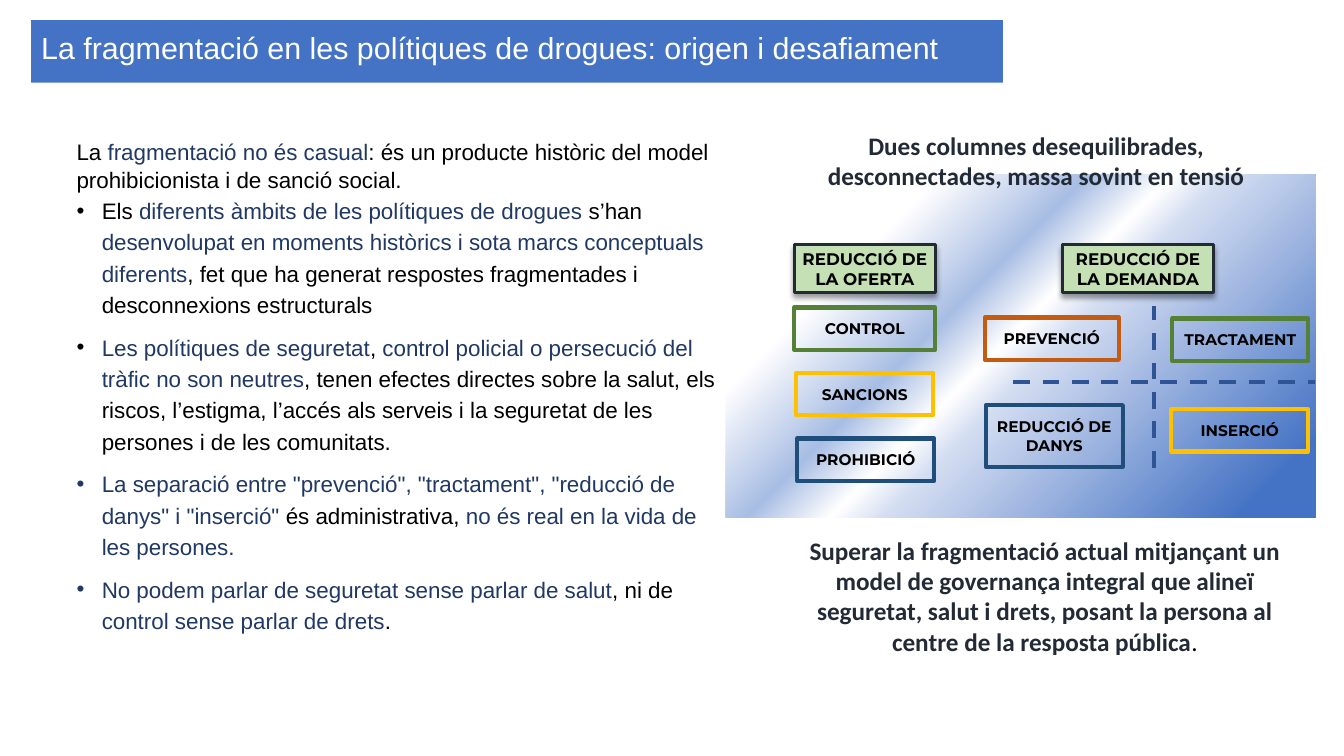
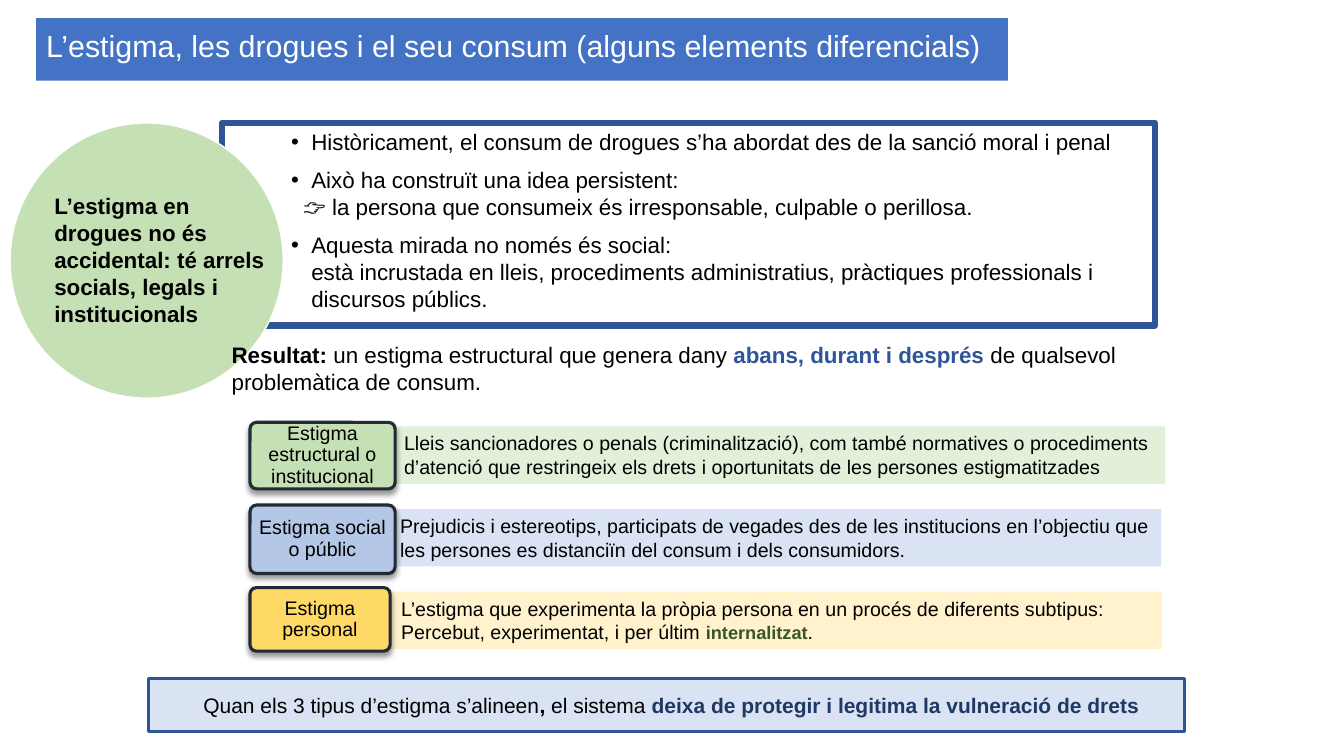
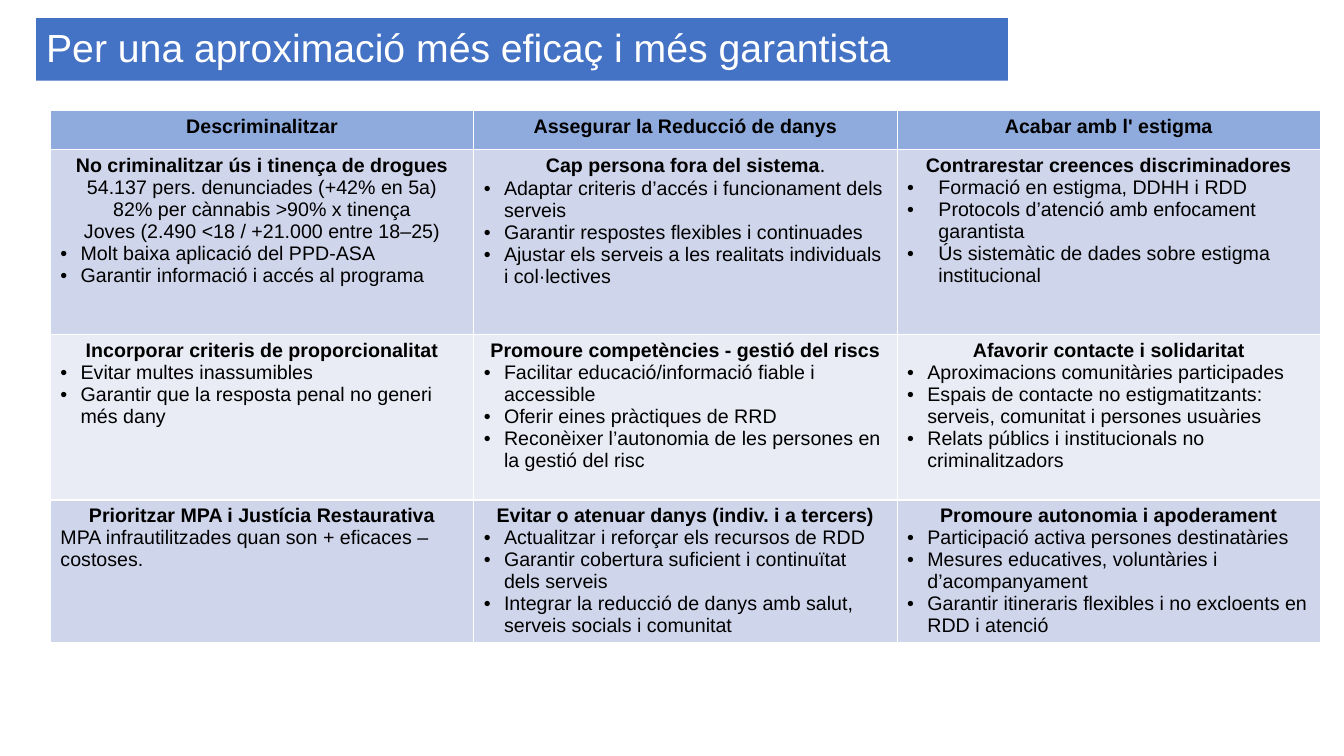
from dataclasses import dataclass
from typing import Any

import lxml.etree
import pptx
import pptx.dml.color
import pptx.enum.dml
import pptx.enum.shapes
import pptx.enum.text
import pptx.oxml.ns
import pptx.util

SHAPE = pptx.enum.shapes.MSO_SHAPE
ANCHOR = pptx.enum.text.MSO_ANCHOR
ALIGN = pptx.enum.text.PP_ALIGN
Pt = pptx.util.Pt
qn = pptx.oxml.ns.qn

# Shared palette
BLACK, WHITE, INK = "000000", "FFFFFF", "222A35"
BLUE, NAVY, EDGE, DASH = "4472C4", "203864", "2F5597", "2F5496"
GREEN, AMBER, STEEL, RUST = "548135", "FFC000", "1E4E79", "C55A11"
MINT, PALE_BLUE = "C5E0B4", "DAE3F3"
BAND_FILLS = ("CFD5EA", "E9EBF5")

GRID = 0.1  # one column or row of the layout grid, in inches
SLIDE_COLS, SLIDE_ROWS = 133.33, 75


def cells(count):
    return pptx.util.Inches(count * GRID)


def rgb(color):
    return pptx.dml.color.RGBColor.from_string(color)


@dataclass
class Box:
    """An area of the grid: left column, top row, columns, rows."""
    left: float
    top: float
    cols: float
    rows: float

    def inner(self, left, top, cols, rows):
        return Box(self.left + left, self.top + top, cols, rows)

    def emu(self):
        return [cells(n) for n in (self.left, self.top, self.cols, self.rows)]


@dataclass
class Para:
    """Runs are plain strings or (text, changes) pairs."""
    runs: Any
    size: float = 16
    color: str = BLACK
    font: str = "Arial"
    bold: bool = False
    align: Any = ALIGN.LEFT
    bullet: str = ""  # bullet colour
    margin: float = 0
    hang: float = 0
    before: float = 0
    after: float = 0
    spacing: Any = None


def style(font, size=None, color=None, name=None, bold=None):
    if size:
        font.size = Pt(size)
    if color:
        font.color.rgb = rgb(color)
    if name:
        font.name = name
    if bold is not None:
        font.bold = bold


def add_bullet(properties, color):
    bullet_color = lxml.etree.SubElement(properties, qn("a:buClr"))
    lxml.etree.SubElement(bullet_color, qn("a:srgbClr"), val=color)
    lxml.etree.SubElement(properties, qn("a:buFont"), typeface="Arial")
    lxml.etree.SubElement(properties, qn("a:buChar"), char="•")


def write(frame, paras):
    for index, para in enumerate(paras):
        line = frame.paragraphs[0] if index == 0 else frame.add_paragraph()
        properties = line._p.get_or_add_pPr()
        if para.margin:
            properties.set("marL", str(cells(para.margin)))
            properties.set("indent", str(-cells(para.hang)))
        if para.bullet:
            add_bullet(properties, para.bullet)
        line.alignment = para.align
        line.space_before, line.space_after = Pt(para.before), Pt(para.after)
        if para.spacing:
            line.line_spacing = para.spacing
        style(line.font, para.size, para.color, para.font, para.bold)
        for piece in [para.runs] if isinstance(para.runs, str) else para.runs:
            text, changes = (piece, {}) if isinstance(piece, str) else piece
            run = line.add_run()
            run.text = text
            style(run.font, **changes)


def set_frame(frame, paras, anchor, insets):
    frame.word_wrap = True
    frame.vertical_anchor = anchor
    side, edge = (cells(n) for n in insets)
    frame.margin_left = frame.margin_right = side
    frame.margin_top = frame.margin_bottom = edge
    write(frame, paras)


def add_text(slide, box, paras, insets=(1, 0.5)):
    set_frame(slide.shapes.add_textbox(*box.emu()).text_frame, paras, ANCHOR.TOP, insets)


def add_block(slide, box, paras=(), fill=None, line=None, width=1, kind=SHAPE.RECTANGLE,
              anchor=ANCHOR.MIDDLE, insets=(1, 0.5), raised=False):
    block = slide.shapes.add_shape(kind, *box.emu())
    block.shadow.inherit = False
    if fill:
        block.fill.solid()
        block.fill.fore_color.rgb = rgb(fill)
    else:
        block.fill.background()
    if line:
        block.line.color.rgb = rgb(line)
        block.line.width = Pt(width)
    else:
        block.line.fill.background()
    if raised:
        effects = block._element.spPr.find(qn("a:effectLst"))
        shadow = lxml.etree.SubElement(effects, qn("a:outerShdw"), blurRad=str(Pt(4)),
                                       dist=str(Pt(3)), dir="5400000", rotWithShape="0")
        tone = lxml.etree.SubElement(shadow, qn("a:srgbClr"), val=BLACK)
        lxml.etree.SubElement(tone, qn("a:alpha"), val="40000")
    set_frame(block.text_frame, paras, anchor, insets)
    return block


def add_title(slide, text, left=3.6, top=1.8, size=21.7, spacing=0.7):
    add_block(slide, Box(left, top, 96.4, 6.2),
              [Para(text, size, WHITE, spacing=spacing)], BLUE)


def add_dashes(slide, start, end):
    dashes = slide.shapes.add_connector(
        pptx.enum.shapes.MSO_CONNECTOR.STRAIGHT, *(cells(n) for n in start + end))
    dashes.line.color.rgb = rgb(DASH)
    dashes.line.width = Pt(3)
    dashes.line.dash_style = pptx.enum.dml.MSO_LINE.DASH
    lxml.etree.SubElement(dashes._element.spPr, qn("a:effectLst"))


# Slide 1: fragmentation
def add_gradient_panel(slide, box):
    panel = add_block(slide, box)
    panel.fill.gradient()
    panel.fill.gradient_angle = 315
    stops = panel._element.spPr.find(qn("a:gradFill")).find(qn("a:gsLst"))
    for stop in list(stops):
        stops.remove(stop)
    for share, color in ((23, WHITE), (39, "A9BEE4"), (48, WHITE), (54, "D3DDF1"), (92, BLUE)):
        stop = lxml.etree.SubElement(stops, qn("a:gs"), pos=str(share * 1000))
        lxml.etree.SubElement(stop, qn("a:srgbClr"), val=color)


def add_policy_map(slide, box):
    add_gradient_panel(slide, box)
    # Policy fields
    fields = [
        ("PREVENCIÓ", RUST, 25.7, 14.2, 13.3, 4.2),
        ("TRACTAMENT", GREEN, 44.3, 14.3, 13.5, 4.2),
        ("REDUCCIÓ DE DANYS", STEEL, 25.8, 22.9, 13.6, 6.1),
        ("INSERCIÓ", AMBER, 44.2, 23.3, 13.6, 4.2),
        ("CONTROL", GREEN, 6.8, 13.2, 14, 4.2),
        ("SANCIONS", AMBER, 7, 19.7, 13.6, 4.2),
        ("PROHIBICIÓ", STEEL, 7.1, 26.2, 13.6, 4.2),
    ]
    for name, color, *place in fields:
        label = Para(name, 11, font="Montserrat", bold=True, align=ALIGN.CENTER)
        add_block(slide, box.inner(*place), [label], line=color, width=3, insets=(0.7, 0.3))
    # Cross between the demand fields
    middle, upright = box.top + 20.6, box.left + 42.5
    add_dashes(slide, (box.left + 28.5, middle), (box.left + box.cols, middle))
    add_dashes(slide, (upright, box.top + 29.1), (upright, box.top + 13.1))
    # Column heads
    for name, left, cols in (("REDUCCIÓ DE LA OFERTA", 6.8, 14),
                             ("REDUCCIÓ DE LA DEMANDA", 33.4, 15)):
        label = Para(name, 12, font="Montserrat", bold=True, align=ALIGN.CENTER)
        add_block(slide, box.inner(left, 7, cols, 4.7), [label], MINT, INK, 2.25,
                  insets=(0.7, 0.3), raised=True)


def add_fragmentation_text(slide, box):
    def accent(text):
        return text, {"color": NAVY}

    points = [
        (BLACK, ["Els ", accent("diferents àmbits de les polítiques de drogues "), "s’han ",
                 accent("desenvolupat en moments històrics i sota marcs conceptuals diferents"),
                 ", fet que ha generat respostes fragmentades i desconnexions estructurals"]),
        (BLACK, [accent("Les polítiques de seguretat"), ", ",
                 accent("control policial o persecució del tràfic no son neutres"),
                 ", tenen efectes directes sobre la salut, els riscos, l’estigma, l’accés als "
                 "serveis i la seguretat de les persones i de les comunitats."]),
        (NAVY, [accent('La separació entre "prevenció", "tractament", "reducció de danys" '
                       'i "inserció" '),
                "és administrativa, ", accent("no és real en la vida de les persones.")]),
        (NAVY, [accent("No podem parlar de seguretat sense parlar de salut"), ", ni de ",
                accent("control sense parlar de drets"), "."]),
    ]
    intro = Para(["La ", accent("fragmentació no és casual"),
                  ": és un producte històric del model prohibicionista i de sanció social."],
                 spacing=Pt(19.5))
    add_text(slide, box, [intro] + [
        Para(runs, bullet=color, margin=2.5, hang=2.5, after=8, spacing=Pt(22.4))
        for color, runs in points], insets=(0, 0))


def build_fragmentation(slide):
    add_policy_map(slide, Box(72, 17.3, 58.5, 34))
    add_title(slide, "La fragmentació en les polítiques de drogues: origen i desafiament", 3.1, 2)
    add_fragmentation_text(slide, Box(7.6, 13.7, 63.6, 50.5))
    # Statements above and below the map
    statements = [
        (Box(76.5, 12.4, 52.6, 7.1),
         ["Dues columnes desequilibrades, desconnectades, massa sovint en tensió"]),
        (Box(76.9, 52.6, 53.5, 13.1),
         ["Superar la fragmentació actual mitjançant un model de governança integral que alineï "
          "seguretat, salut i drets, posant la persona al centre de la resposta pública",
          (".", {"color": BLACK, "bold": False})]),
    ]
    for box, runs in statements:
        add_text(slide, box, [Para(runs, 18, INK, "Calibri", True, ALIGN.CENTER)])


# Slide 2: stigma
def add_origins(slide, box):
    history = [
        Para("Històricament, el consum de drogues s’ha abordat des de la sanció moral i penal",
             bullet=BLACK, margin=7.9, hang=2),
        Para("Això ha construït una idea persistent:", bullet=BLACK, margin=7.9, hang=2, before=8),
        Para("👉 la persona que consumeix és irresponsable, culpable o perillosa.", margin=7.1),
        Para("Aquesta mirada no només és social:", bullet=BLACK, margin=7.9, hang=2, before=8),
        Para("està incrustada en lleis, procediments administratius, pràctiques professionals "
             "i discursos públics.", margin=7.9),
    ]
    add_block(slide, box.inner(21, 0, 92.6, 20.1), history, line=EDGE, width=4.5,
              anchor=ANCHOR.TOP)
    add_block(slide, box.inner(0, 0, 27.1, 27.3), fill=MINT, line=WHITE, kind=SHAPE.OVAL)
    add_text(slide, box.inner(3.4, 6.4, 23.7, 14.5), [
        Para("L’estigma en drogues no és accidental: té arrels socials, legals i institucionals",
             bold=True)])
    add_text(slide, box.inner(21, 21.2, 94.4, 6.4), [Para([
        ("Resultat: ", {"bold": True}), "un estigma estructural que genera dany ",
        ("abans, durant i després ", {"color": EDGE, "bold": True}),
        "de qualsevol problemàtica de consum."])])


def add_stigma_types(slide, box):
    # Label, its fill and size, description, its fill and left column
    kinds = [
        ("Estigma estructural o institucional", MINT, 14.4, 6.6,
         "Lleis sancionadores o penals (criminalització), com també normatives o procediments "
         "d’atenció que restringeix els drets i oportunitats de les persones estigmatitzades",
         "E2F0D9", 14.3),
        ("Estigma social o públic", "B4C7E7", 14.4, 6.8,
         "Prejudicis i estereotips, participats de vegades des de les institucions en l’objectiu "
         "que les persones es distanciïn del consum i dels consumidors.", PALE_BLUE, 13.9),
        ("Estigma personal", "FFD966", 13.9, 6.3,
         ["L’estigma que experimenta la pròpia persona en un procés de diferents subtipus: "
          "Percebut, experimentat, i per últim ",
          ("internalitzat", {"size": 13, "color": "385723", "bold": True}), "."],
         "FFF2CC", 14),
    ]
    for index, (label, fill, cols, rows, meaning, pale, left) in enumerate(kinds):
        top = index * box.rows / len(kinds)
        add_block(slide, box.inner(left, top + 0.4, 76.5, 5.7), [Para(meaning, 14)], pale,
                  anchor=ANCHOR.TOP)
        tag = add_block(slide, box.inner(0, top, cols, rows),
                        [Para(label, 14, align=ALIGN.CENTER, spacing=0.9)], fill, INK, 2.25,
                        SHAPE.ROUNDED_RECTANGLE, insets=(0.5, 0.2), raised=True)
        tag.adjustments[0] = 0.1


def build_stigma(slide):
    add_origins(slide, Box(1, 12.2, 115.4, 27.6))
    add_title(slide, "L’estigma, les drogues i el seu consum (alguns elements diferencials)")
    # Conclusion
    conclusion = ["Quan els 3 tipus d’estigma s’alineen", (", ", {"bold": True}), "el sistema ",
                  ("deixa de protegir i legitima la vulneració de drets",
                   {"color": NAVY, "bold": True})]
    add_block(slide, Box(14.7, 67.3, 102.8, 5.3),
              [Para(conclusion, 15, align=ALIGN.CENTER, margin=1)], PALE_BLUE, EDGE, 2.25)
    add_stigma_types(slide, Box(24.8, 41.9, 90.8, 24.6))


# Slide 3: proposals
def head(runs):
    return Para(runs, 14, bold=True, align=ALIGN.CENTER)


def plain(text, align=ALIGN.LEFT):
    return Para(text, 14, align=align)


def bullets(*texts, hang=2):
    return [Para(text, 14, bullet=BLACK, margin=hang, hang=hang) for text in texts]


def add_proposals(slide, box, row_sizes, rows):
    table = slide.shapes.add_table(len(rows), len(rows[0]), *box.emu()).table
    for column in table.columns:
        column.width = cells(box.cols / len(rows[0]))
    for index, (size, contents) in enumerate(zip(row_sizes, rows)):
        table.rows[index].height = cells(size)
        fill = BAND_FILLS[(index - 1) % 2] if index else "8FAADC"
        for cell, paras in zip(table.rows[index].cells, contents):
            cell.fill.solid()
            cell.fill.fore_color.rgb = rgb(fill)
            write(cell.text_frame, paras)


def build_proposals(slide):
    add_title(slide, "Per una aproximació més eficaç i més garantista", size=28, spacing=0.9)
    rows = [
        [[head("Descriminalitzar")], [head("Assegurar la Reducció de danys")],
         [head("Acabar amb l' estigma")]],
        [[head("No criminalitzar ús i tinença de drogues"),
          plain("54.137 pers. denunciades (+42% en 5a)", ALIGN.CENTER),
          plain("82% per cànnabis >90% x tinença", ALIGN.CENTER),
          plain("Joves (2.490 <18 / +21.000 entre 18–25)", ALIGN.CENTER),
          *bullets("Molt baixa aplicació del PPD-ASA", "Garantir informació i accés al programa")],
         [head(["Cap persona fora del sistema", (".", {"name": "Calibri", "bold": False})]),
          *bullets("Adaptar criteris d’accés i funcionament dels serveis",
                   "Garantir respostes flexibles i continuades",
                   "Ajustar els serveis a les realitats individuals i col·lectives")],
         [head("Contrarestar creences discriminadores"),
          *bullets("Formació en estigma, DDHH i RDD",
                   "Protocols d’atenció amb enfocament garantista",
                   "Ús sistemàtic de dades sobre estigma institucional", hang=3.1)]],
        [[head("Incorporar criteris de proporcionalitat"),
          *bullets("Evitar multes inassumibles",
                   "Garantir que la resposta penal no generi més dany")],
         [head("Promoure competències - gestió del riscs"),
          *bullets("Facilitar educació/informació fiable i accessible",
                   "Oferir eines pràctiques de RRD",
                   "Reconèixer l’autonomia de les persones en la gestió del risc")],
         [head("Afavorir contacte i solidaritat"),
          *bullets("Aproximacions comunitàries participades",
                   "Espais de contacte no estigmatitzants: serveis, comunitat i persones usuàries",
                   "Relats públics i institucionals no criminalitzadors")]],
        [[head("Prioritzar MPA i Justícia Restaurativa"),
          plain("MPA infrautilitzades quan son + eficaces – costoses.")],
         [head("Evitar o atenuar danys (indiv. i a tercers)"),
          *bullets("Actualitzar i reforçar els recursos de RDD",
                   "Garantir cobertura suficient i continuïtat dels serveis",
                   "Integrar la reducció de danys amb salut, serveis socials i comunitat")],
         [head("Promoure autonomia i apoderament"),
          *bullets("Participació activa persones destinatàries",
                   "Mesures educatives, voluntàries i d’acompanyament",
                   "Garantir itineraris flexibles i no excloents en RDD i atenció")]],
    ]
    add_proposals(slide, Box(5, 11, 126, 52.7), (3.8, 18.4, 16.4, 14.1), rows)


def main():
    deck = pptx.Presentation()
    deck.slide_width, deck.slide_height = cells(SLIDE_COLS), cells(SLIDE_ROWS)
    for build in (build_fragmentation, build_stigma, build_proposals):
        build(deck.slides.add_slide(deck.slide_layouts[6]))
    deck.save("out.pptx")


if __name__ == "__main__":
    main()
